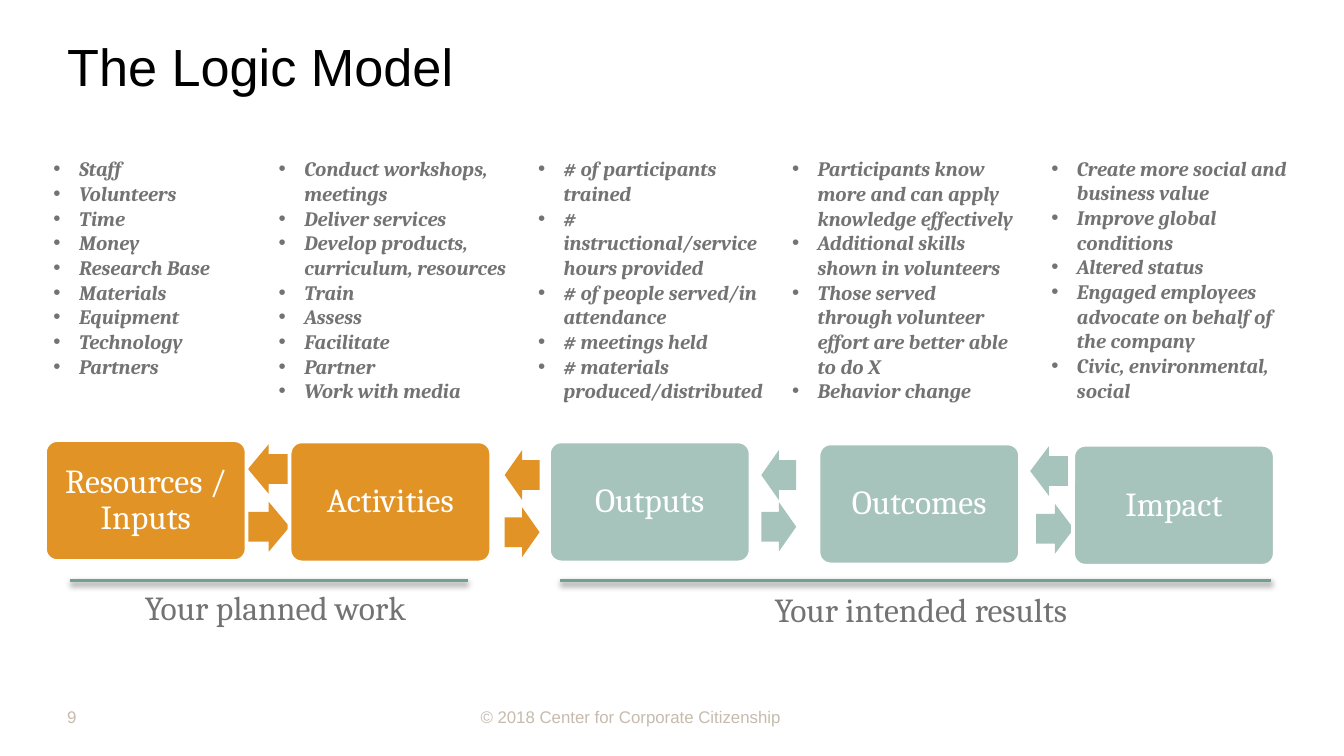
"""Build the logic model slide with its five stages."""
import lxml.etree
import pptx
import pptx.dml.color
import pptx.enum.shapes
import pptx.enum.text
import pptx.oxml
import pptx.oxml.ns
import pptx.util

Kind = pptx.enum.shapes.MSO_SHAPE
Align = pptx.enum.text.PP_ALIGN
Fit = pptx.enum.text.MSO_AUTO_SIZE
Middle = pptx.enum.text.MSO_ANCHOR.MIDDLE

PX = 4572
COLORS = {"gold": "E29326", "sage": "A6C4BC", "green": "70A093", "grey": "737373",
          "tan": "C6BBAE", "white": "FFFFFF", "black": "000000"}
TITLE = "The Logic Model"
STAGES = [
    ("Resources /Inputs", "gold", (67, 655), (60, 223, 300, 354),
     ["Staff", "Volunteers", "Time", "Money", "Research Base", "Materials",
      "Equipment", "Technology", "Partners"]),
    ("Activities", "gold", (431, 657), (395, 223, 396, 390),
     ["Conduct workshops, meetings", "Deliver services",
      "Develop products, curriculum, resources", "Train", "Assess", "Facilitate",
      "Partner", "Work with media"]),
    ("Outputs", "sage", (817, 657), (781, 223, 378, 428),
     ["# of participants trained", "# instructional/service hours provided",
      "# of people served/in attendance", "# meetings held",
      "# materials produced/distributed"]),
    ("Outcomes", "sage", (1218, 660), (1159, 223, 370, 512),
     ["Participants know more and can apply knowledge effectively",
      "Additional skills shown in volunteers",
      "Those served through volunteer effort are better able to do X",
      "Behavior change"]),
    ("Impact", "sage", (1597, 662), (1545, 222, 400, 478),
     ["Create more social and business value", "Improve global conditions",
      "Altered status", "Engaged employees advocate on behalf of the company",
      "Civic, environmental, social"]),
]
ARROWS = [
    ("gold", 62, (369, 661), (369, 747)),
    ("gold", 52, (751, 670), (751, 755)),
    ("sage", 52, (1133, 670), (1133, 747)),
    ("sage", 56, (1533, 664), (1542, 750)),
]
SPANS = [
    ("Your planned work", (196, 864, 450, 80), (104, 696)),
    ("Your intended results", (1133, 867, 502, 80), (834, 1892)),
]
NOTES = [("© 2018 Center for Corporate Citizenship", (715, 1037, 456, 60)),
         ("9", (100, 1037, 466, 60))]
RULE_Y = 864
CARD_W, CARD_H, ARROW_H, INDENT = 300, 180, 74, 38
SHADOW = (
    '<a:effectLst xmlns:a="http://schemas.openxmlformats.org/drawingml/2006/main">'
    '<a:outerShdw blurRad="39370" dist="20320" dir="5400000" rotWithShape="0">'
    '<a:srgbClr val="000000"><a:alpha val="38000"/></a:srgbClr>'
    '</a:outerShdw></a:effectLst>')


def scale(*sizes):
    return [pptx.util.Emu(size * PX) for size in sizes]


def tint(name):
    return pptx.dml.color.RGBColor.from_string(COLORS[name])


def write(para, text, size, face, color, strong=False):
    run = para.add_run()
    run.text = text
    font = run.font
    font.size, font.name = pptx.util.Pt(size), face
    font.color.rgb = tint(color)
    font.bold = font.italic = strong


def inset(frame, size):
    frame.margin_left, frame.margin_top, frame.margin_right, frame.margin_bottom = scale(*[size] * 4)
    frame.vertical_anchor = Middle


def add_box(slide, place, wrap=True):
    frame = slide.shapes.add_textbox(*scale(*place)).text_frame
    frame.word_wrap = wrap
    return frame


def add_shape(slide, kind, place, color):
    shape = slide.shapes.add_shape(kind, *scale(*place))
    shape.shadow.inherit = False
    shape.fill.solid()
    shape.fill.fore_color.rgb = tint(color)
    shape.line.fill.background()
    return shape


def add_card(slide, text, color, spot):
    card = add_shape(slide, Kind.ROUNDED_RECTANGLE, (*spot, CARD_W, CARD_H), color)
    card.adjustments[0] = 0.1
    card.line.color.rgb = tint("white")
    card.line.width = pptx.util.Pt(2)
    frame = card.text_frame
    frame.word_wrap = True
    inset(frame, 20)
    para = frame.paragraphs[0]
    para.alignment, para.line_spacing = Align.CENTER, 0.9
    write(para, text, 18, "Cambria", "white")


def add_list(slide, place, items):
    frame = add_box(slide, place)
    frame.auto_size = Fit.SHAPE_TO_FIT_TEXT
    for rank, item in enumerate(items):
        para = frame.add_paragraph() if rank else frame.paragraphs[0]
        props = para._p.get_or_add_pPr()
        props.set("marL", str(INDENT * PX))
        props.set("indent", str(-INDENT * PX))
        for tag, key, value in (("a:buFont", "typeface", "Arial"), ("a:buChar", "char", "•")):
            lxml.etree.SubElement(props, pptx.oxml.ns.qn(tag)).set(key, value)
        write(para, item, 11, "Cambria", "grey", True)


def add_arrow(slide, kind, spot, width, color):
    arrow = add_shape(slide, kind, (*spot, width, ARROW_H), color)
    arrow.adjustments[0], arrow.adjustments[1] = 0.6, 0.5


def add_span(slide, text, place, ends):
    frame = add_box(slide, place, False)
    frame.auto_size = Fit.SHAPE_TO_FIT_TEXT
    write(frame.paragraphs[0], text, 18, "Cambria", "grey")
    start, end = ends
    rule = slide.shapes.add_connector(pptx.enum.shapes.MSO_CONNECTOR.STRAIGHT,
                                      *scale(start, RULE_Y, end, RULE_Y))
    rule.line.color.rgb = tint("green")
    rule.line.width = pptx.util.Pt(2)
    rule._element.spPr.append(pptx.oxml.parse_xml(SHADOW))


def main():
    deck = pptx.Presentation()
    deck.slide_width, deck.slide_height = scale(2000, 1125)
    slide = deck.slides.add_slide(deck.slide_layouts[5])
    title = slide.shapes.title
    title.left, title.top, title.width, title.height = scale(100, 17, 1900, 162)
    inset(title.text_frame, 0)
    para = title.text_frame.paragraphs[0]
    para.alignment = Align.LEFT
    write(para, TITLE, 28, "Arial", "black")
    for text, place in NOTES:
        frame = add_box(slide, place)
        inset(frame, 0)
        write(frame.paragraphs[0], text, 9, "Arial", "tan")
    for color, width, back, ahead in ARROWS:
        add_arrow(slide, Kind.LEFT_ARROW, back, width, color)
        add_arrow(slide, Kind.RIGHT_ARROW, ahead, width, color)
    for text, color, spot, place, items in STAGES:
        add_card(slide, text, color, spot)
        add_list(slide, place, items)
    for span in SPANS:
        add_span(slide, *span)
    deck.save("out.pptx")


if __name__ == "__main__":
    main()
